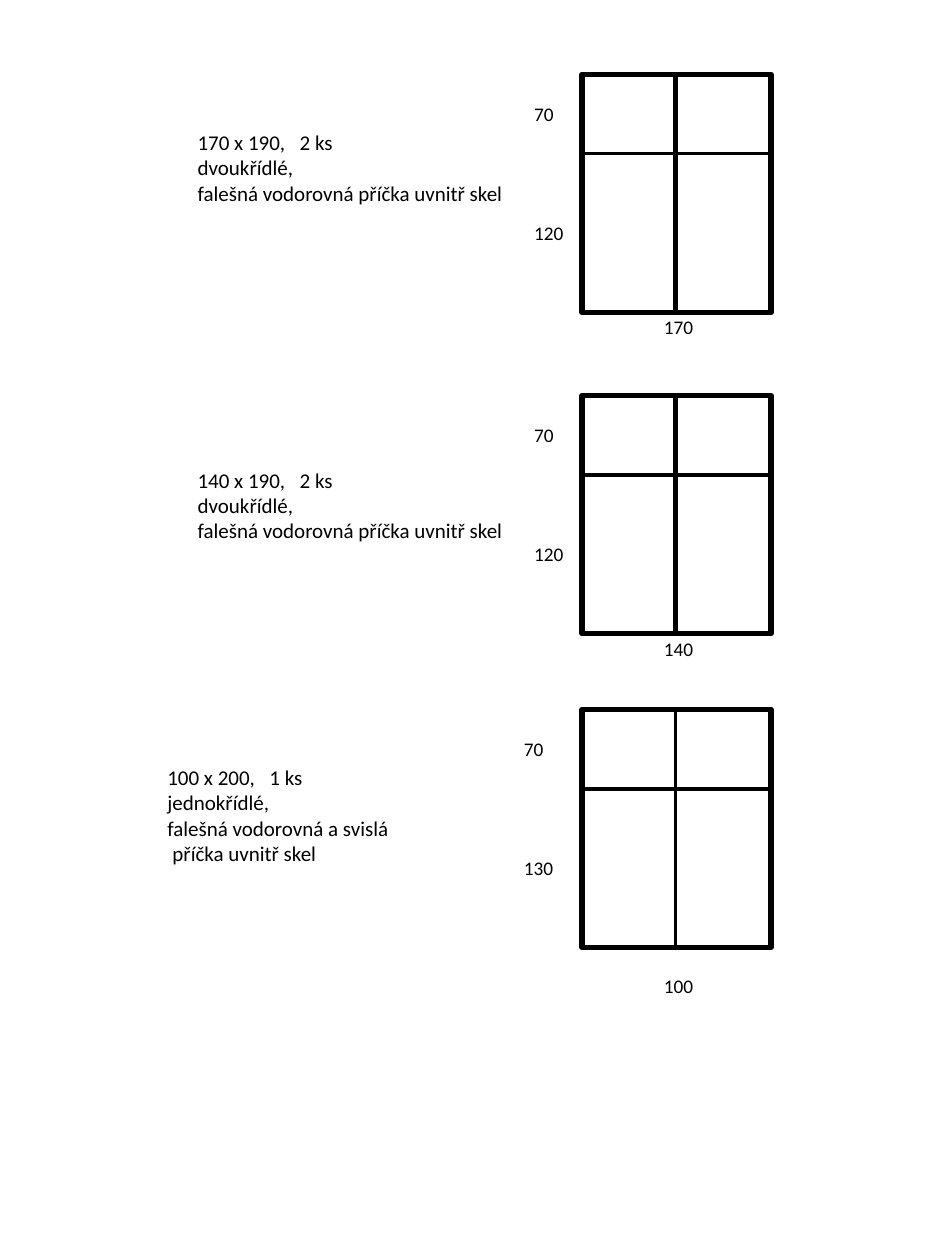
from lxml import etree
from pptx import Presentation
from pptx import util as u
from pptx.dml.color import RGBColor
from pptx.enum import shapes, text
from pptx.oxml import ns

PAGE_W, PAGE_H = 7.5, 10
BLACK = "000000"
FONT = "Calibri"

# Every window is drawn at one size; only the labels tell the real dimensions
FRAME_X, FRAME_W, FRAME_H = 4.62, 1.5, 1.89
TRANSOM_SHARE = 1 / 3
LABEL_H = 0.29
QUANTITY_TAB = 0.81

DOUBLE_SASH = ["dvoukřídlé,", "falešná vodorovná příčka uvnitř skel"]
SINGLE_SASH = ["jednokřídlé,", "falešná vodorovná a svislá", "příčka uvnitř skel"]

WINDOWS = [
    dict(top=0.59, mullion=3, heights=("70", "120"), width="170", height_x=4.14,
         width_y=2.45, size="170 x 190,", count="2 ks", details=DOUBLE_SASH,
         note=(1.47, 0.98, 2.71, 0.71), last_indent=0),
    dict(top=3.14, mullion=3, heights=("70", "120"), width="140", height_x=4.14,
         width_y=5.01, size="140 x 190,", count="2 ks", details=DOUBLE_SASH,
         note=(1.47, 3.66, 2.71, 0.71), last_indent=0),
    dict(top=5.63, mullion=2, heights=("70", "130"), width="100", height_x=4.06,
         width_y=7.68, size="100 x 200,", count="1 ks", details=SINGLE_SASH,
         note=(1.23, 6.02, 1.98, 0.91), last_indent=0.04),
]


def color(hex_code):
    return RGBColor.from_string(hex_code)


def inches(*lengths):
    return [u.Inches(length) for length in lengths]


def add_bar(slide, start, end, weight):
    bar = slide.shapes.add_connector(
        shapes.MSO_CONNECTOR.STRAIGHT, *inches(*start, *end))
    bar.line.color.rgb = color(BLACK)
    bar.line.width = u.Pt(weight)
    etree.SubElement(bar._element.spPr, ns.qn("a:effectLst"))


def add_frame(slide, top):
    frame = slide.shapes.add_shape(
        shapes.MSO_SHAPE.RECTANGLE, *inches(FRAME_X, top, FRAME_W, FRAME_H))
    frame.shadow.inherit = False
    frame.fill.background()
    frame.line.color.rgb = color(BLACK)
    frame.line.width = u.Pt(3)


def add_text_frame(slide, box, wrap):
    frame = slide.shapes.add_textbox(*inches(*box)).text_frame
    frame.word_wrap = wrap
    frame.auto_size = text.MSO_AUTO_SIZE.SHAPE_TO_FIT_TEXT
    return frame


def add_run(paragraph, words, size):
    run = paragraph.add_run()
    run.text = words
    run.font.name = FONT
    run.font.size = u.Pt(size)
    run.font.color.rgb = color(BLACK)


def add_label(slide, x, y, words):
    width = 0.2 + 0.08 * len(words)
    label = add_text_frame(slide, (x, y, width, LABEL_H), wrap=False)
    add_run(label.paragraphs[0], words, 11)


def add_note(slide, window):
    note = add_text_frame(slide, window["note"], wrap=True)
    heading = note.paragraphs[0]
    # The quantity lines up on a tab stop after the size
    stops = etree.SubElement(heading._p.get_or_add_pPr(), ns.qn("a:tabLst"))
    etree.SubElement(stops, ns.qn("a:tab"),
                     pos=str(u.Inches(QUANTITY_TAB)), algn="l")
    add_run(heading, f"{window['size']}\t{window['count']}", 12)
    for detail in window["details"]:
        line = note.add_paragraph()
        add_run(line, detail, 12)
    if window["last_indent"]:
        line._p.get_or_add_pPr().set("marL", str(u.Inches(window["last_indent"])))


def add_window(slide, window):
    top = window["top"]
    middle_x = FRAME_X + FRAME_W / 2 - 0.01
    transom_y = top + FRAME_H * TRANSOM_SHARE

    # Frame with its mullion and transom
    add_frame(slide, top)
    add_bar(slide, (middle_x, top), (middle_x, top + FRAME_H), window["mullion"])
    add_bar(slide, (FRAME_X, transom_y), (FRAME_X + FRAME_W, transom_y), 2)

    # Dimensions, the heights centred on their panes
    upper, lower = window["heights"]
    upper_y = (top + transom_y - LABEL_H) / 2
    lower_y = (transom_y + top + FRAME_H - LABEL_H) / 2
    add_label(slide, window["height_x"], upper_y, upper)
    add_label(slide, window["height_x"], lower_y, lower)
    add_label(slide, 5.17, window["width_y"], window["width"])

    # Order description
    add_note(slide, window)


def main():
    deck = Presentation()
    deck.slide_width, deck.slide_height = inches(PAGE_W, PAGE_H)
    slide = deck.slides.add_slide(deck.slide_layouts[6])
    for window in WINDOWS:
        add_window(slide, window)
    deck.save("out.pptx")


if __name__ == "__main__":
    main()
